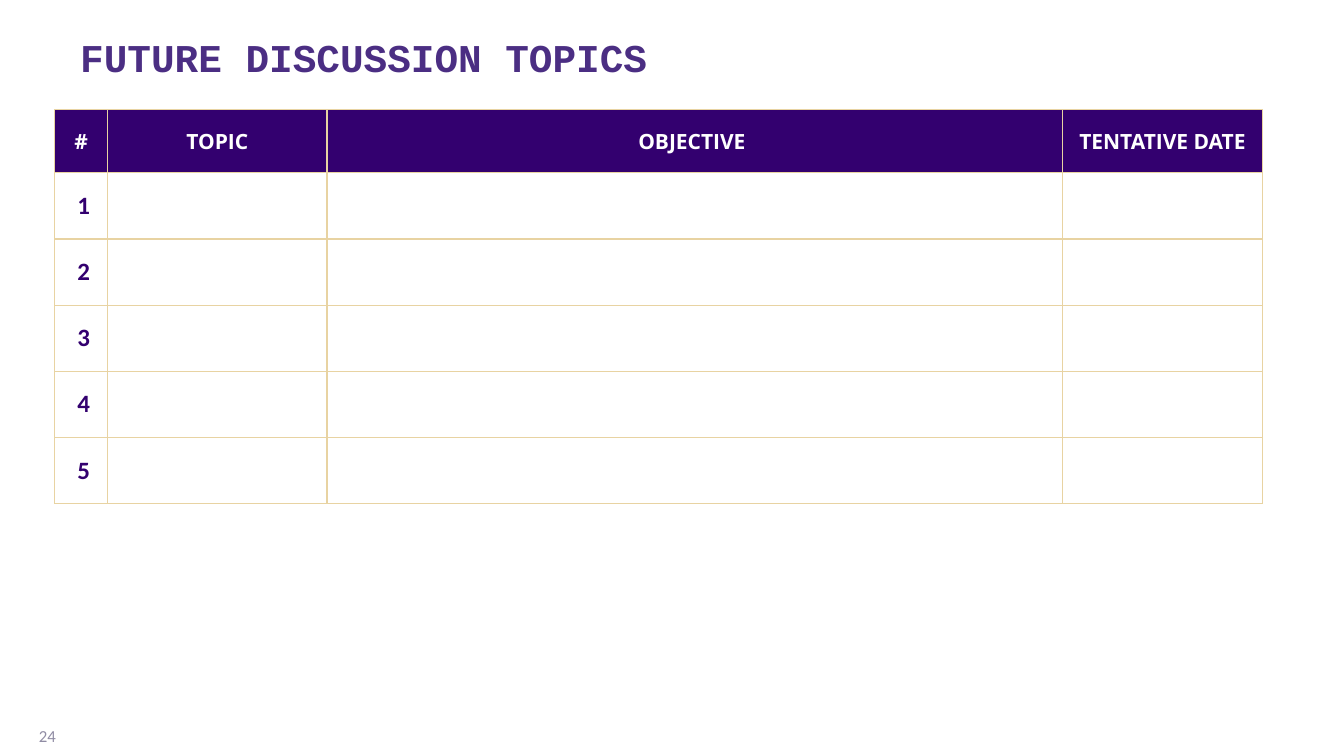
from dataclasses import dataclass

from lxml.etree import SubElement
from pptx import Presentation
from pptx.dml.color import RGBColor
from pptx.enum.text import MSO_ANCHOR as Anchor, PP_ALIGN as Align
from pptx.oxml.ns import qn
from pptx.util import Inches, Pt

SLIDE_WIDTH, SLIDE_HEIGHT = Inches(14.22), Inches(8)
WHITE = RGBColor(0xFF, 0xFF, 0xFF)
PURPLE = RGBColor(0x4B, 0x2E, 0x83)
DEEP_PURPLE = RGBColor(0x33, 0x00, 0x6F)
GOLD = RGBColor(0xE8, 0xD3, 0xA2)
GREY = RGBColor(0x90, 0x8C, 0xA4)


@dataclass(frozen=True)
class TextStyle:
    font: str
    size: float
    color: RGBColor
    bold: bool
    align: Align


@dataclass(frozen=True)
class Area:
    left: float
    top: float
    width: float
    height: float

    def lengths(self) -> tuple[int, int, int, int]:
        return (
            int(self.left * SLIDE_WIDTH),
            int(self.top * SLIDE_HEIGHT),
            int(self.width * SLIDE_WIDTH),
            int(self.height * SLIDE_HEIGHT),
        )


@dataclass(frozen=True)
class Column:
    heading: str
    width: float


TITLE_STYLE = TextStyle("Courier New", 30, PURPLE, True, Align.LEFT)
PAGE_STYLE = TextStyle("Calibri", 12.8, GREY, False, Align.RIGHT)
HEADING_STYLE = TextStyle("Open Sans", 16, WHITE, True, Align.CENTER)
NUMBER_STYLE = TextStyle("Calibri", 19, DEEP_PURPLE, True, Align.CENTER)

TITLE_AREA = Area(0.75 / 14.22, 0.36 / 8, 12.45 / 14.22, 0.52 / 8)
PAGE_AREA = Area(0.19 / 14.22, 7.57 / 8, 0.5 / 14.22, 0.43 / 8)
AGENDA_AREA = Area(0.58 / 14.22, 1.16 / 8, 12.77 / 14.22, 4.17 / 8)

COLUMNS = [
    Column("#", 0.56),
    Column("TOPIC", 2.32),
    Column("OBJECTIVE ", 7.78),
    Column("TENTATIVE DATE", 2.12),
]
TOPIC_COUNT = 5
HEADING_HEIGHT, TOPIC_HEIGHT = 0.67, 0.7


def write(frame, text: str, style: TextStyle):
    paragraph = frame.paragraphs[0]
    paragraph.alignment = style.align
    run = paragraph.add_run()
    run.text = text
    run.font.name = style.font
    run.font.size = Pt(style.size)
    run.font.bold = style.bold
    run.font.color.rgb = style.color
    return paragraph


def add_text(slide, area: Area, text: str, style: TextStyle, anchor: Anchor):
    frame = slide.shapes.add_textbox(*area.lengths()).text_frame
    frame.word_wrap = True
    frame.vertical_anchor = anchor
    return write(frame, text, style)


def outline(cell) -> None:
    properties = cell._tc.get_or_add_tcPr()
    for side in ("a:lnL", "a:lnR", "a:lnT", "a:lnB"):
        border = SubElement(properties, qn(side), w=str(Pt(1)))
        fill = SubElement(border, qn("a:solidFill"))
        SubElement(fill, qn("a:srgbClr"), val=str(GOLD))


def fill_cell(cell, text: str, style: TextStyle, left_margin: float) -> None:
    cell.vertical_anchor = Anchor.MIDDLE
    cell.margin_left = Inches(left_margin)
    cell.margin_right = cell.margin_top = cell.margin_bottom = 0
    write(cell.text_frame, text, style)


def add_agenda(slide) -> None:
    agenda = slide.shapes.add_table(
        TOPIC_COUNT + 1, len(COLUMNS), *AGENDA_AREA.lengths()
    ).table
    agenda.first_row = agenda.horz_banding = False
    for grid_column, column in zip(agenda.columns, COLUMNS):
        grid_column.width = Inches(column.width)
    for number, row in enumerate(agenda.rows):
        row.height = Inches(TOPIC_HEIGHT if number else HEADING_HEIGHT)
        for cell, column in zip(row.cells, COLUMNS):
            outline(cell)
            if number:
                cell.fill.background()
            else:
                cell.fill.solid()
                cell.fill.fore_color.rgb = DEEP_PURPLE
                fill_cell(cell, column.heading, HEADING_STYLE, 0)
        if number:
            fill_cell(row.cells[0], str(number), NUMBER_STYLE, 0.05)


def main() -> None:
    deck = Presentation()
    deck.slide_width, deck.slide_height = SLIDE_WIDTH, SLIDE_HEIGHT
    slide = deck.slides.add_slide(deck.slide_layouts[6])
    title = add_text(
        slide, TITLE_AREA, "FUTURE DISCUSSION TOPICS", TITLE_STYLE, Anchor.TOP
    )
    title.line_spacing = 0.9
    add_text(slide, PAGE_AREA, "24", PAGE_STYLE, Anchor.MIDDLE)
    add_agenda(slide)
    deck.save("out.pptx")


if __name__ == "__main__":
    main()
